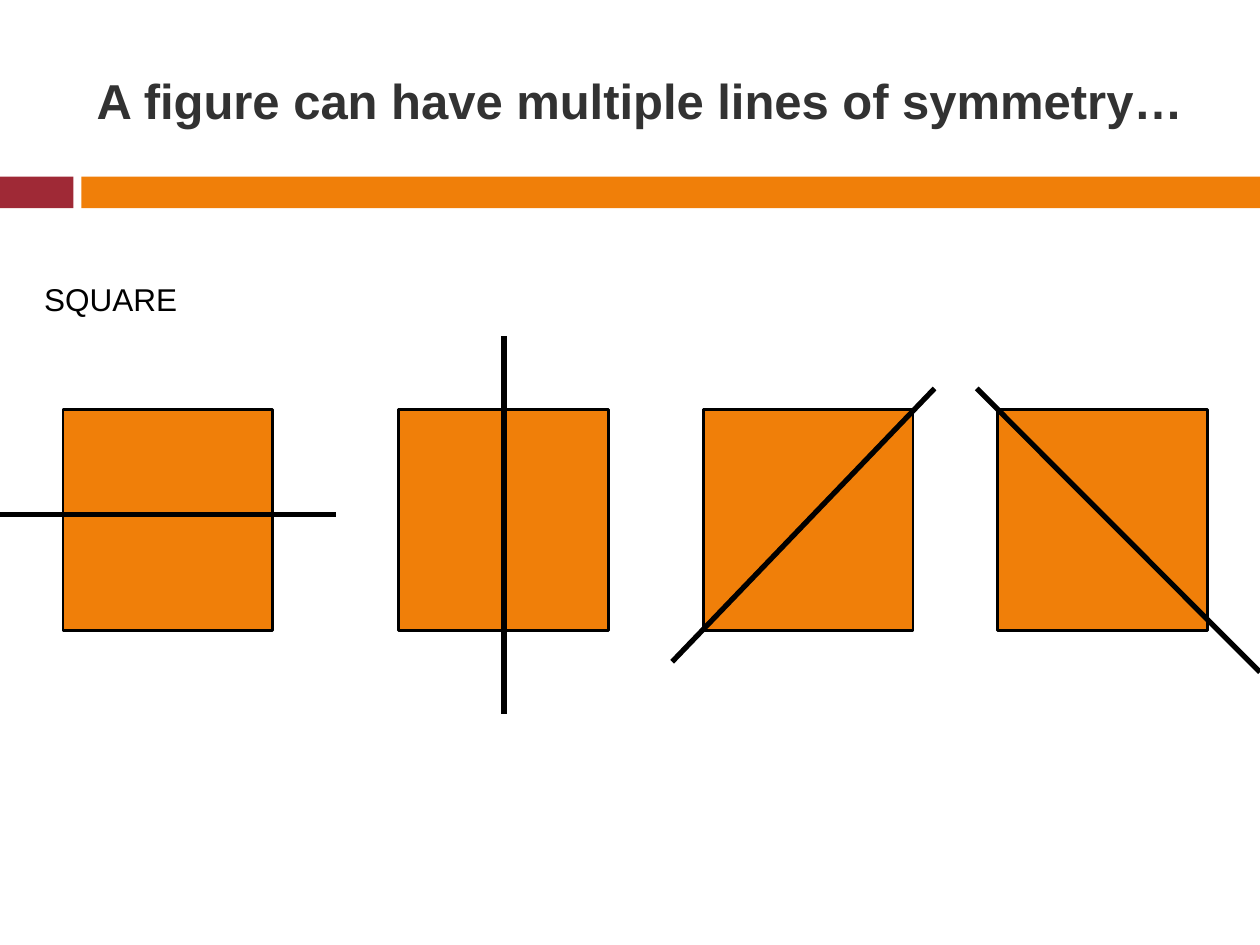
from lxml import etree
from pptx import Presentation
from pptx.dml.color import RGBColor
from pptx.enum.shapes import MSO_CONNECTOR, MSO_SHAPE
from pptx.enum.text import MSO_ANCHOR, PP_ALIGN
from pptx.oxml.ns import qn
from pptx.util import Cm, Pt

RECTANGLE = MSO_SHAPE.RECTANGLE
STRAIGHT = MSO_CONNECTOR.STRAIGHT
MIDDLE, TOP = MSO_ANCHOR.MIDDLE, MSO_ANCHOR.TOP
LEFT = PP_ALIGN.LEFT
FONT = "Arial"
COLORS = {
    "red": "9F2936",
    "orange": "F07F09",
    "title": "323232",
    "black": "000000",
}
SQUARE_TOP, SQUARE_WIDTH, SQUARE_HEIGHT = 8.26, 4.23, 4.45
SQUARES_WITH_AXES = [
    (1.27, (0, 10.37, 6.77, 10.37)),
    (8.04, (10.16, 6.77, 10.16, 14.39)),
    (14.18, (18.84, 7.83, 13.55, 13.34)),
    (20.11, (25.4, 13.55, 19.69, 7.83)),
]


def color(name):
    """Return the named colour."""
    return RGBColor.from_string(COLORS[name])


def add_rectangle(page, left, top, width, height, fill, outlined=False):
    """Add a filled rectangle, with a black outline if asked."""
    box = page.shapes.add_shape(RECTANGLE, Cm(left), Cm(top), Cm(width), Cm(height))
    box.shadow.inherit = False
    box.fill.solid()
    box.fill.fore_color.rgb = color(fill)
    if outlined:
        box.line.color.rgb = color("black")
        box.line.width = Pt(1.5)
    else:
        box.line.fill.background()


def add_axis(page, start_x, start_y, end_x, end_y):
    """Add a thick black line of symmetry."""
    axis = page.shapes.add_connector(
        STRAIGHT, Cm(start_x), Cm(start_y), Cm(end_x), Cm(end_y)
    )
    axis.line.color.rgb = color("black")
    axis.line.width = Pt(3)
    etree.SubElement(axis._element.spPr, qn("a:effectLst"))


def write_text(box, text, size, fill, anchor, bold=False):
    """Write one left-aligned run into a box."""
    frame = box.text_frame
    frame.word_wrap = True
    frame.vertical_anchor = anchor
    frame.margin_left = frame.margin_right = Cm(0.25)
    frame.margin_top = frame.margin_bottom = Cm(0.13)
    para = frame.paragraphs[0]
    para.alignment = LEFT
    span = para.add_run()
    span.text = text
    span.font.name = FONT
    span.font.size = Pt(size)
    span.font.bold = bold
    span.font.color.rgb = color(fill)


def add_title(page, text):
    """Place and fill the title placeholder."""
    title = page.shapes.title
    title.left, title.top = Cm(1.7), Cm(0.64)
    title.width, title.height = Cm(22.66), Cm(2.74)
    write_text(title, text, 28, "title", MIDDLE, bold=True)


def add_label(page, text):
    """Add the label that names the figure."""
    label = page.shapes.add_textbox(Cm(0.64), Cm(5.51), Cm(3.23), Cm(1.02))
    write_text(label, text, 18, "black", TOP)


def main():
    """Build and save the slide on lines of symmetry."""
    deck = Presentation()
    deck.slide_width, deck.slide_height = Cm(25.4), Cm(19.05)
    page = deck.slides.add_slide(deck.slide_layouts[5])
    add_rectangle(page, 0, 3.56, 1.48, 0.64, "red")
    add_rectangle(page, 1.64, 3.56, 23.76, 0.64, "orange")
    add_title(page, "A figure can have multiple lines of symmetry…")
    add_label(page, "SQUARE")
    for left, axis in SQUARES_WITH_AXES:
        add_rectangle(
            page, left, SQUARE_TOP, SQUARE_WIDTH, SQUARE_HEIGHT, "orange", outlined=True
        )
        add_axis(page, *axis)
    deck.save("out.pptx")


if __name__ == "__main__":
    main()
